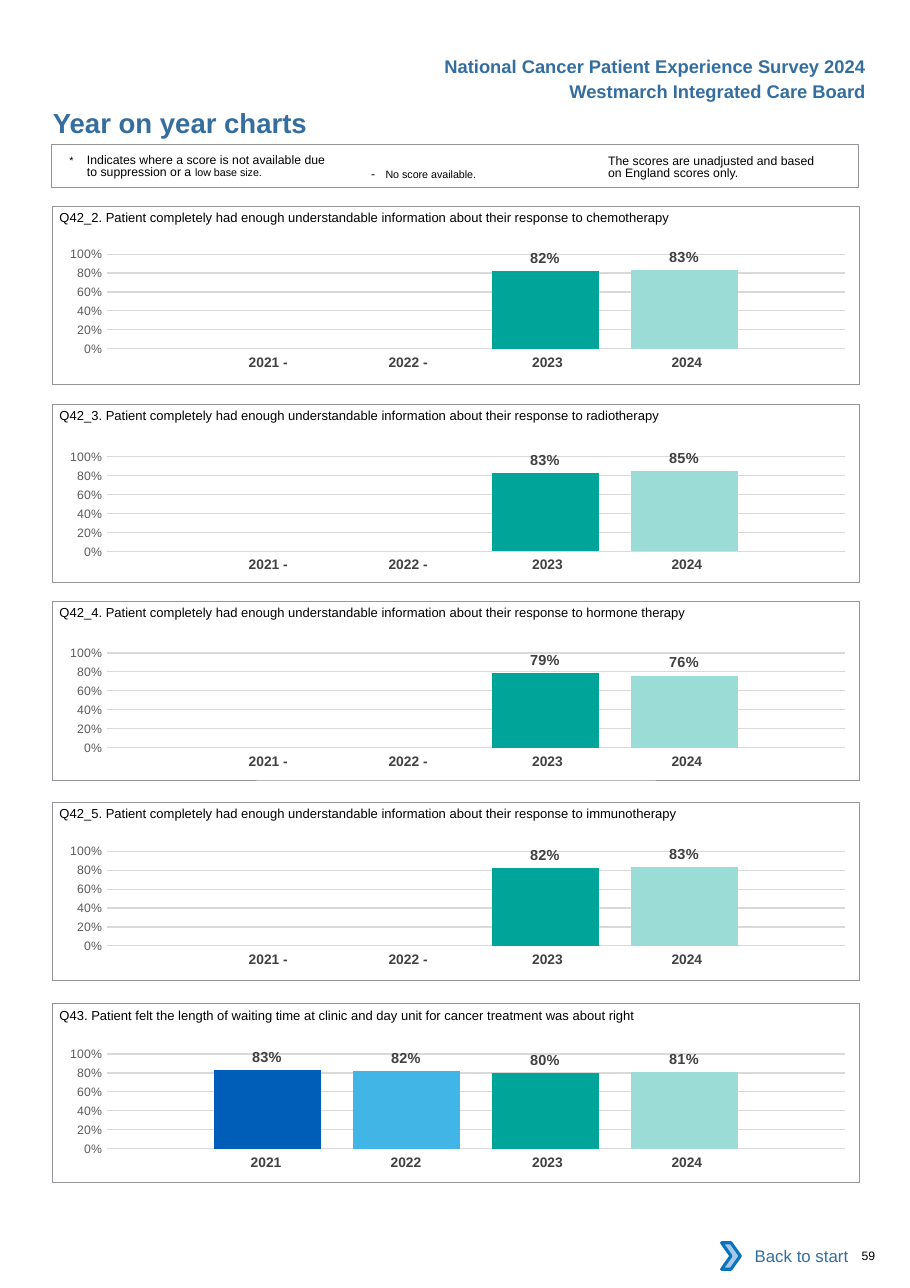
from lxml import etree
from pptx import Presentation
from pptx.chart.data import CategoryChartData
from pptx.dml.color import RGBColor
from pptx.enum.chart import XL_CHART_TYPE, XL_LABEL_POSITION, XL_TICK_MARK
from pptx.enum.shapes import MSO_SHAPE
from pptx.enum.text import MSO_ANCHOR, PP_ALIGN
from pptx.oxml.ns import qn
from pptx.util import Inches, Pt

COLUMNS = XL_CHART_TYPE.COLUMN_CLUSTERED
OUTSIDE_END = XL_LABEL_POSITION.OUTSIDE_END
NO_TICKS = XL_TICK_MARK.NONE
RECTANGLE, CHEVRON = MSO_SHAPE.RECTANGLE, MSO_SHAPE.CHEVRON
LEFT, CENTER, RIGHT = PP_ALIGN.LEFT, PP_ALIGN.CENTER, PP_ALIGN.RIGHT
MIDDLE = MSO_ANCHOR.MIDDLE

COLORS = {
    "heading": "336E9F", "text": "000000", "frame": "939598", "white": "FFFFFF",
    "year": "414042", "label": "404040", "axis": "595959", "grid": "D9D9D9",
    "arrow": "A8C7E9", "arrow_line": "0A74BB",
    "2021": "005EB8", "2022": "41B6E6", "2023": "00A499", "2024": "9CDCD7",
}
YEARS = ["2021", "2022", "2023", "2024"]
YEAR_WIDTHS = [1.27, 1.27, 1.34, 1.27]
YEAR_RIGHT_MARGINS = [0, 0, 0.04, 0.12]
PLOT_LAYOUT = {"x": 0.079, "y": 0.145, "w": 0.915, "h": 0.666}
FRAME_LEFT, FRAME_WIDTH, FRAME_HEIGHT = 0.48, 7.32, 1.62

RESPONSE = "Patient completely had enough understandable information about their response to"
# question, scores by year, frame top, chart top
PANELS = [
    (f"Q42_2. {RESPONSE} chemotherapy", [None, None, 0.82, 0.83], 1.87, 2.12),
    (f"Q42_3. {RESPONSE} radiotherapy", [None, None, 0.83, 0.85], 3.67, 3.96),
    (f"Q42_4. {RESPONSE} hormone therapy", [None, None, 0.79, 0.76], 5.46, 5.74),
    (f"Q42_5. {RESPONSE} immunotherapy", [None, None, 0.82, 0.83], 7.28, 7.54),
    ("Q43. Patient felt the length of waiting time at clinic and day unit "
     "for cancer treatment was about right", [0.83, 0.82, 0.8, 0.81], 9.11, 9.38),
]


def rgb(name):
    return RGBColor.from_string(COLORS[name])


def style_font(font, size, color, bold=False):
    font.name = "Arial"
    font.size = Pt(size)
    font.bold = bold
    font.color.rgb = rgb(color)


def add_text(slide, box, runs, color="text", bold=False, align=LEFT, hanging=0, line=None):
    """Add one paragraph without margins; runs are (text, size) pairs."""
    frame = slide.shapes.add_textbox(*map(Inches, box)).text_frame
    frame.word_wrap = True
    frame.margin_left = frame.margin_right = frame.margin_top = frame.margin_bottom = 0
    paragraph = frame.paragraphs[0]
    paragraph.alignment = align
    if line:
        paragraph.line_spacing = Pt(line)
    if hanging:
        properties = paragraph._p.get_or_add_pPr()
        properties.set("marL", str(Inches(hanging)))
        properties.set("indent", str(-Inches(hanging)))
    for text, size in runs:
        run = paragraph.add_run()
        run.text = text
        style_font(run.font, size, color, bold)


def add_block(slide, preset, box, fill=None, line=None, width=0.5):
    block = slide.shapes.add_shape(preset, *map(Inches, box))
    block.shadow.inherit = False
    if fill:
        block.fill.solid()
        block.fill.fore_color.rgb = rgb(fill)
    else:
        block.fill.background()
    if line:
        block.line.color.rgb = rgb(line)
        block.line.width = Pt(width)
    else:
        block.line.fill.background()
    return block


def add_year_row(slide, top, scores):
    """Label the columns, marking years that have no score with a dash."""
    table = slide.shapes.add_table(
        1, len(YEARS), Inches(1.73), Inches(top), Inches(sum(YEAR_WIDTHS)), Inches(0.27)
    ).table
    table.first_row = table.horz_banding = False
    for index, (year, score) in enumerate(zip(YEARS, scores)):
        table.columns[index].width = Inches(YEAR_WIDTHS[index])
        cell = table.cell(0, index)
        cell.fill.background()
        cell.margin_left = Inches(0.14 if score is None else 0.1)
        cell.margin_right = Inches(YEAR_RIGHT_MARGINS[index])
        cell.text = f"{year} -" if score is None else year
        paragraph = cell.text_frame.paragraphs[0]
        paragraph.alignment = CENTER
        style_font(paragraph.runs[0].font, 9, "year", True)


def set_plot_layout(chart):
    plot_area = chart._chartSpace.chart.plotArea
    for old_layout in plot_area.findall(qn("c:layout")):
        plot_area.remove(old_layout)
    layout = etree.Element(qn("c:layout"))
    manual = etree.SubElement(layout, qn("c:manualLayout"))
    settings = {"layoutTarget": "inner", "xMode": "edge", "yMode": "edge", **PLOT_LAYOUT}
    for tag, value in settings.items():
        etree.SubElement(manual, qn(f"c:{tag}")).set("val", str(value))
    plot_area.insert(0, layout)


def add_score_chart(slide, top, scores):
    data = CategoryChartData(number_format="0%")
    data.categories = ["1"]
    for year, score in zip(YEARS, scores):
        data.add_series(year, [score])
    chart = slide.shapes.add_chart(
        COLUMNS, Inches(0.39), Inches(top), Inches(7.32), Inches(1.29), data
    ).chart
    chart.has_legend = chart.has_title = False
    chart.font.name = "Calibri"
    chart.font.size = Pt(10)
    set_plot_layout(chart)

    chart.category_axis.visible = False
    axis = chart.value_axis
    axis.minimum_scale, axis.maximum_scale, axis.major_unit = 0, 1, 0.2
    axis.major_tick_mark = axis.minor_tick_mark = NO_TICKS
    axis.format.line.fill.background()
    axis.major_gridlines.format.line.color.rgb = rgb("grid")
    axis.major_gridlines.format.line.width = Pt(0.75)
    axis.tick_labels.number_format = "0%"
    axis.tick_labels.number_format_is_linked = False
    style_font(axis.tick_labels.font, 8, "axis")

    plot = chart.plots[0]
    plot.gap_width, plot.overlap, plot.vary_by_categories = 200, -30, False
    for series in plot.series:
        series.format.fill.solid()
        series.format.fill.fore_color.rgb = rgb(series.name)
        labels = series.data_labels
        labels.show_value = True
        labels.position = OUTSIDE_END
        labels.number_format = "0%"
        labels.number_format_is_linked = False
        style_font(labels.font, 9.5, "label", True)


def add_panel(slide, question, scores, frame_top, chart_top):
    add_text(slide, (0.54, frame_top + 0.03, 7.24, 0.15), [(question, 8.5)])
    add_year_row(slide, chart_top + 1.05, scores)
    add_score_chart(slide, chart_top, scores)
    add_block(slide, RECTANGLE, (FRAME_LEFT, frame_top, FRAME_WIDTH, FRAME_HEIGHT), line="frame")


def add_key(slide):
    add_text(slide, (5.52, 1.41, 1.95, 0.24),
             [("The scores are unadjusted and based on England scores only.", 8)], line=8.1)
    add_text(slide, (3.37, 1.51, 1.63, 0.13), [("-\t", 8), ("No score available.", 7)],
             hanging=0.13)
    add_text(slide, (0.63, 1.4, 2.37, 0.24),
             [("*\t", 7), ("Indicates where a score is not available due to suppression or a ", 8),
              ("low base size.", 7)], hanging=0.16, line=8.1)
    add_block(slide, RECTANGLE, (0.47, 1.31, 7.32, 0.39), line="frame", width=0.75)


def add_back_button(slide):
    button = add_block(slide, RECTANGLE, (6.62, 11.19, 1.18, 0.42), fill="white")
    frame = button.text_frame
    frame.vertical_anchor = MIDDLE
    frame.word_wrap = False
    frame.text = "Back to start"
    frame.paragraphs[0].alignment = RIGHT
    style_font(frame.paragraphs[0].runs[0].font, 11, "heading")
    add_block(slide, CHEVRON, (6.55, 11.28, 0.17, 0.24), "arrow", "arrow_line", 2)


def main():
    deck = Presentation()
    deck.slide_width, deck.slide_height = Inches(8.26), Inches(11.69)
    slide = deck.slides.add_slide(deck.slide_layouts[6])
    add_text(slide, (3.5, 0.5, 4.36, 0.2),
             [("National Cancer Patient Experience Survey 2024", 12)], "heading", True, RIGHT)
    add_text(slide, (3.5, 0.73, 4.36, 0.2),
             [("Westmarch Integrated Care Board", 12)], "heading", True, RIGHT)
    add_text(slide, (0.48, 0.96, 4.5, 0.3), [("Year on year charts", 18)], "heading", True)
    add_key(slide)
    for panel in PANELS:
        add_panel(slide, *panel)
    add_back_button(slide)
    add_text(slide, (7.82, 11.33, 0.41, 0.13), [("59", 8)])
    deck.save("out.pptx")


if __name__ == "__main__":
    main()
